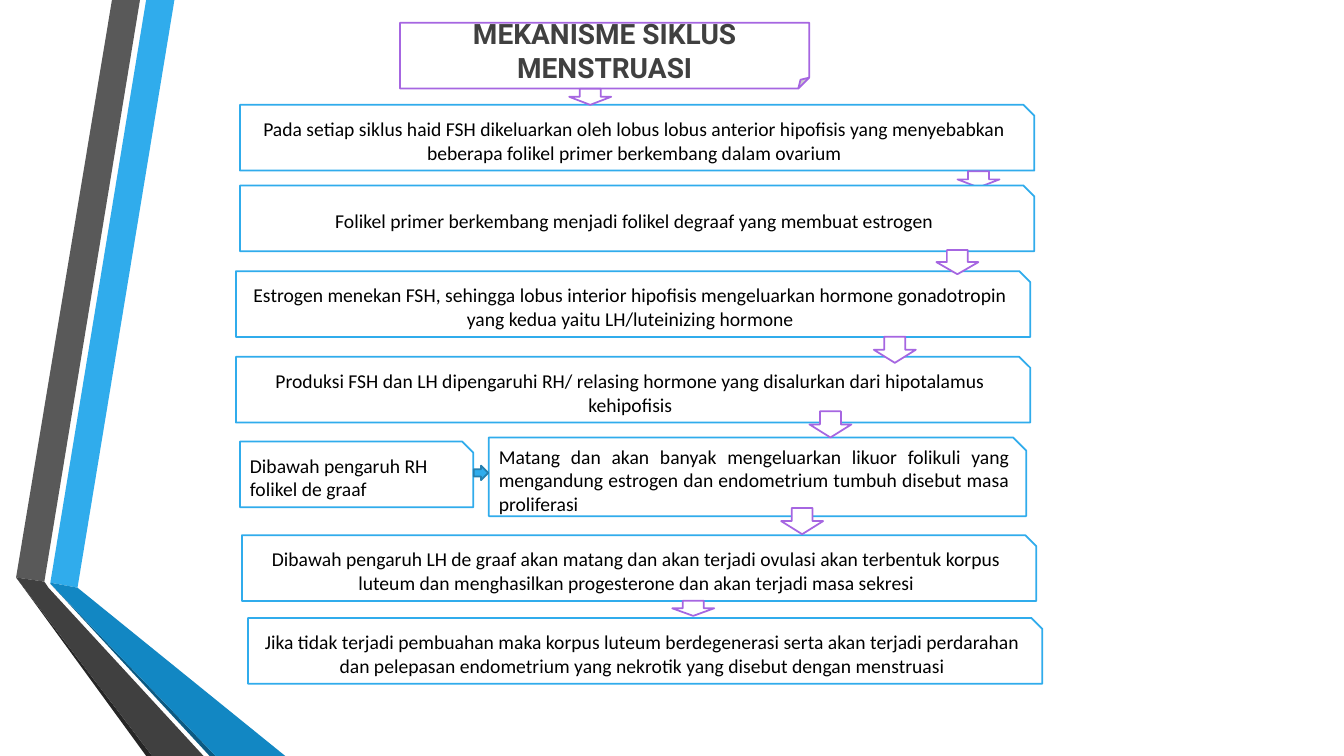
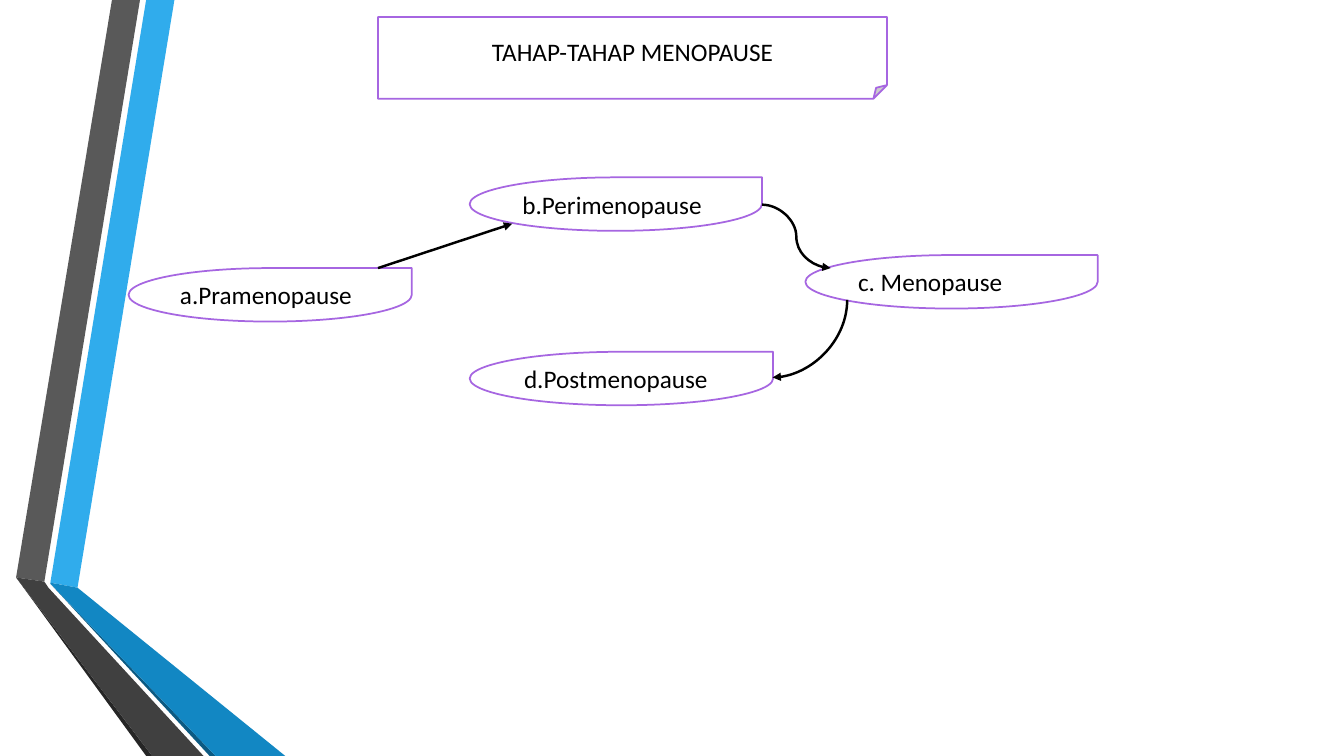
from lxml.etree import SubElement
from pptx import Presentation
from pptx.dml.color import RGBColor
from pptx.enum.shapes import MSO_CONNECTOR as LINK, MSO_SHAPE as SHAPE
from pptx.enum.text import MSO_ANCHOR, MSO_AUTO_SIZE, PP_ALIGN as ALIGN
from pptx.oxml.ns import qn
from pptx.util import Pt

WHITE = RGBColor(0xFF, 0xFF, 0xFF)
BLACK = RGBColor(0x00, 0x00, 0x00)
SKY = RGBColor(0x30, 0xAC, 0xEC)
BLUE = RGBColor(0x12, 0x87, 0xC3)
STEEL = RGBColor(0x24, 0x7F, 0xAF)
NAVY = RGBColor(0x0C, 0x5A, 0x82)
PURPLE = RGBColor(0xA6, 0x66, 0xE1)
GREY = RGBColor(0x59, 0x59, 0x59)
CHARCOAL = RGBColor(0x40, 0x40, 0x40)
SOOT = RGBColor(0x26, 0x26, 0x26)

BANDS = [
    (SKY, [(36, 416.2), (55.4, 419.8), (124.6, 0), (104.4, 0)]),
    (GREY, [(100, 0), (80, 0), (11.5, 412.5), (31.7, 415.5)]),
    (SOOT, [(11.5, 412.5), (104.4, 540), (108.7, 540)]),
    (NAVY, [(36, 416.9), (149.8, 540), (154.1, 540)]),
    (BLUE, [(36, 416.9), (154.1, 540), (203.8, 540), (55.4, 419.8), (36, 416.2)]),
    (CHARCOAL, [(145.4, 540), (34.6, 419.8), (31.7, 415.5), (11.5, 412.5), (108.7, 540)]),
]

STEP_WIDTH, STEP_HEIGHT = 567.4, 47
RIPE_WIDTH, RIPE_HEIGHT = 383.8, 56.2
UNDER_RH_WIDTH = 166.6
ARROW_WIDTH = 30

CYCLE = [
    (171.4, 74.9, STEP_WIDTH, STEP_HEIGHT, ALIGN.CENTER,
     "Pada setiap siklus haid FSH dikeluarkan oleh lobus lobus anterior hipofisis "
     "yang menyebabkan beberapa folikel primer berkembang dalam ovarium",
     [(406.6, 63.4, 11.5), (684, 122.4, 11.5)]),
    (171.4, 132.5, STEP_WIDTH, STEP_HEIGHT, ALIGN.CENTER,
     "Folikel primer berkembang menjadi folikel degraaf yang membuat estrogen", []),
    (168.5, 193.7, STEP_WIDTH, STEP_HEIGHT, ALIGN.CENTER,
     "Estrogen menekan FSH, sehingga lobus interior hipofisis mengeluarkan hormone "
     "gonadotropin yang kedua yaitu LH/luteinizing hormone",
     [(668.9, 178.6, 17.3)]),
    (168.5, 254.9, STEP_WIDTH, STEP_HEIGHT, ALIGN.CENTER,
     "Produksi FSH dan LH dipengaruhi RH/ relasing hormone yang disalurkan dari "
     "hipotalamus kehipofisis",
     [(624.2, 240.5, 18.7)]),
    (171.4, 315.4, UNDER_RH_WIDTH, STEP_HEIGHT, ALIGN.LEFT,
     "Dibawah pengaruh RH folikel de graaf", []),
    (349.2, 312.5, RIPE_WIDTH, RIPE_HEIGHT, ALIGN.JUSTIFY,
     "Matang dan akan banyak mengeluarkan likuor folikuli yang mengandung estrogen "
     "dan endometrium tumbuh disebut masa proliferasi",
     [(578.2, 293.8, 18.7)]),
    (172.8, 382.3, STEP_WIDTH, STEP_HEIGHT, ALIGN.CENTER,
     "Dibawah pengaruh LH de graaf akan matang dan akan terjadi ovulasi akan "
     "terbentuk korpus luteum dan menghasilkan progesterone dan akan terjadi masa sekresi",
     [(558, 362.9, 18.7)]),
    (177.1, 441.4, STEP_WIDTH, STEP_HEIGHT, ALIGN.CENTER,
     "Jika tidak terjadi pembuahan maka korpus luteum berdegenerasi serta akan terjadi "
     "perdarahan dan pelepasan endometrium yang nekrotik yang disebut dengan menstruasi",
     [(480.2, 429.1, 10.8)]),
]

STAGE_HEIGHT = 38.2
STAGES = [
    (91.8, 191.5, 202.3, "a.Pramenopause"),
    (335.5, 126.7, 208.8, "b.Perimenopause"),
    (575.3, 182.2, 208.8, "c. Menopause"),
    (335.5, 251.3, 216.7, "d.Postmenopause"),
]


def write(shape, text, size=14, font="Calibri", color=BLACK, bold=False, align=ALIGN.LEFT):
    """Put one formatted paragraph into a shape."""
    frame = shape.text_frame
    frame.word_wrap = True
    frame.auto_size = MSO_AUTO_SIZE.NONE
    frame.vertical_anchor = MSO_ANCHOR.MIDDLE
    paragraph = frame.paragraphs[0]
    paragraph.alignment = align
    run = paragraph.add_run()
    run.text = text
    run.font.size = Pt(size)
    run.font.name = font
    run.font.bold = bold
    run.font.color.rgb = color


class Deck:
    """Hold the shared style and the slide being drawn."""

    def __init__(self):
        """Open a wide presentation with a title layout."""
        self.file = Presentation()
        self.file.slide_width, self.file.slide_height = Pt(960), Pt(540)
        self.layout = self.file.slide_layouts[5]
        self.slide = None

    def add_slide(self):
        """Start a slide, placing the bands on the layout the first time."""
        first = self.slide is None
        self.slide = self.file.slides.add_slide(self.layout)
        if first:
            for number, (color, points) in enumerate(BANDS, 101):
                band = self.band(color, points)._element
                band.nvSpPr.cNvPr.set("id", str(number))
                self.layout.shapes._spTree.append(band)

    def band(self, color, points):
        """Draw a filled polygon."""
        corners = [(Pt(x), Pt(y)) for x, y in points]
        outline = self.slide.shapes.build_freeform(*corners[0])
        outline.add_line_segments(corners[1:], close=True)
        polygon = outline.convert_to_shape()
        polygon.shadow.inherit = False
        polygon.fill.solid()
        polygon.fill.fore_color.rgb = color
        polygon.line.fill.background()
        return polygon

    def box(self, kind, left, top, width, height, line=PURPLE, fill=WHITE):
        """Draw an outlined preset shape."""
        box = self.slide.shapes.add_shape(kind, Pt(left), Pt(top), Pt(width), Pt(height))
        box.shadow.inherit = False
        box.fill.solid()
        box.fill.fore_color.rgb = fill
        box.line.color.rgb = line
        box.line.width = Pt(1.25)
        return box

    def title(self, text, left, top, width, height, **style):
        """Set the title on a folded note, above its fold."""
        self.box(SHAPE.FOLDED_CORNER, left, top, width, height)
        title = self.slide.shapes.title
        title.left, title.top = Pt(left), Pt(top)
        title.width, title.height = Pt(width), Pt(height * 5 / 6)
        write(title, text, align=ALIGN.CENTER, **style)
        self.slide.shapes._spTree.append(title._element)

    def link(self, kind, start, end, quarter_turn=False):
        """Draw an arrow, optionally as a quarter arc turned clockwise."""
        link = self.slide.shapes.add_connector(kind, *map(Pt, start + end))
        link.line.color.rgb = BLACK
        link.line.width = Pt(1.75)
        SubElement(link.line._get_or_add_ln(), qn("a:tailEnd"), type="triangle")
        properties = link._element.spPr
        SubElement(properties, qn("a:effectLst"))
        if quarter_turn:
            properties.find(qn("a:prstGeom")).set("prst", "curvedConnector2")
            properties.find(qn("a:xfrm")).set("rot", "5400000")


def draw_cycle(deck):
    """Draw the menstrual cycle as a chain of steps."""
    deck.add_slide()
    deck.title("MEKANISME SIKLUS MENSTRUASI", 285.8, 16.3, 292.3, 47,
               size=20, font="Roboto", color=CHARCOAL, bold=True)
    for left, top, width, height, align, text, arrows in CYCLE:
        step = deck.box(SHAPE.SNIP_1_RECTANGLE, left, top, width, height, line=SKY)
        write(step, text, align=align)
        for arrow_left, arrow_top, arrow_height in arrows:
            deck.box(SHAPE.DOWN_ARROW, arrow_left, arrow_top, ARROW_WIDTH, arrow_height)
    deck.box(SHAPE.RIGHT_ARROW, 338.4, 332.6, 10.4, 10.4, line=STEEL, fill=SKY)


def draw_stages(deck):
    """Draw the four stages of menopause and their order."""
    deck.add_slide()
    deck.title("TAHAP-TAHAP MENOPAUSE", 270, 12.2, 363.6, 58.3, size=18)
    for left, top, width, text in STAGES:
        stage = deck.box(SHAPE.TEAR, left, top, width, STAGE_HEIGHT)
        write(stage, text, size=18)
    deck.link(LINK.STRAIGHT, (270, 191.5), (365.8, 159.8))
    deck.link(LINK.CURVE, (544.3, 146.2), (593.3, 191.5))
    deck.link(LINK.CURVE, (550.8, 215.3), (606.2, 268.6), quarter_turn=True)


def main():
    """Build and save the deck."""
    deck = Deck()
    draw_cycle(deck)
    draw_stages(deck)
    deck.file.save("out.pptx")


if __name__ == "__main__":
    main()
